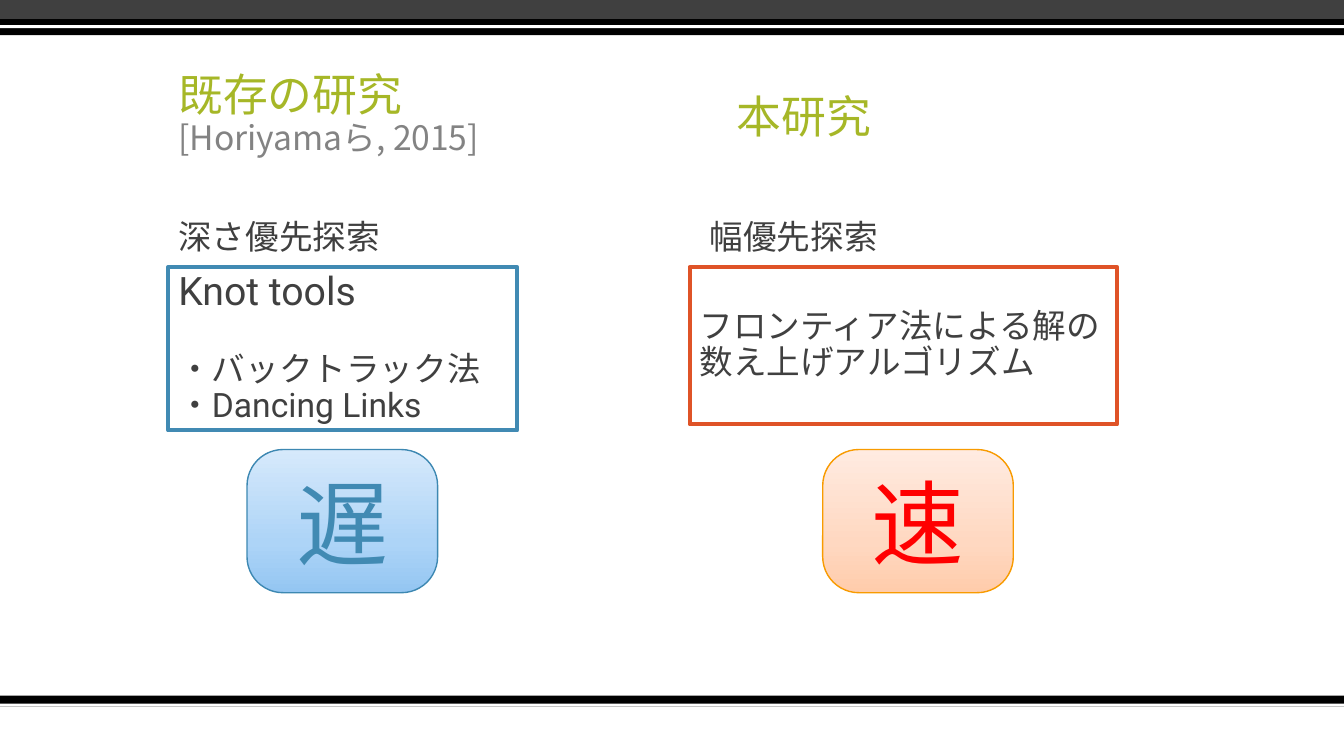
from copy import deepcopy
from dataclasses import dataclass

from pptx import Presentation
from pptx.dml.color import RGBColor
from pptx.enum.shapes import MSO_SHAPE
from pptx.enum.text import MSO_ANCHOR, PP_ALIGN
from pptx.oxml.ns import qn
from pptx.oxml.xmlchemy import OxmlElement
from pptx.util import Inches, Pt


@dataclass(frozen=True)
class Theme:
    """Colours, fonts and type sizes of the slide."""
    black: str = "000000"
    white: str = "FFFFFF"
    band: str = "404040"
    body: str = "404040"
    heading: str = "A6B727"
    citation: str = "838383"
    blue: str = "418AB3"
    blue_edge: str = "3D88B2"
    blue_blend: tuple = ("94C6F2", "ADD4F7", "D6E9FB")
    red: str = "FF0000"
    vermilion: str = "DF5327"
    orange_edge: str = "F89B00"
    orange_blend: tuple = ("FFCCAB", "FFD8C1", "FFEBE1")
    blend_stops: tuple = (0, 0.35, 1)
    heading_font: str = "Noto Sans CJK JP"
    body_font: str = "Roboto"
    heading_size: int = 32
    tool_size: int = 28
    body_size: int = 24
    verdict_size: int = 66


THEME = Theme()
SLIDE_WIDTH = 13.33


def rgb(code):
    """Turn a hex code into a colour."""
    return RGBColor.from_string(code)


def write(paragraph, text, size=THEME.body_size, color=THEME.body,
          font=THEME.body_font, align=PP_ALIGN.LEFT, spacing=0.9, before=0):
    """Add one formatted run to a paragraph."""
    paragraph.alignment = align
    paragraph.line_spacing = spacing
    paragraph.space_before = Pt(before)
    run = paragraph.add_run()
    run.text = text
    run.font.size = Pt(size)
    run.font.color.rgb = rgb(color)
    run.font.name = font
    east_asian = OxmlElement("a:ea")
    east_asian.set("typeface", font)
    run.font._element.find(qn("a:latin")).addnext(east_asian)


def add_outline(slide, box, preset=MSO_SHAPE.RECTANGLE, fill=None, line=None, width=1):
    """Add a shadowless preset shape in the given box."""
    shape = slide.shapes.add_shape(preset, *map(Inches, box))
    shape.shadow.inherit = False
    if fill:
        shape.fill.solid()
        shape.fill.fore_color.rgb = rgb(fill)
    else:
        shape.fill.background()
    if line:
        shape.line.color.rgb = rgb(line)
        shape.line.width = Pt(width)
    else:
        shape.line.fill.background()
    return shape


def add_label(slide, box, anchor=MSO_ANCHOR.TOP):
    """Add a wrapping text box and return its first paragraph."""
    frame = slide.shapes.add_textbox(*map(Inches, box)).text_frame
    frame.word_wrap = True
    frame.vertical_anchor = anchor
    return frame.paragraphs[0]


def add_bands(slide):
    """Draw the striped bands along the top and bottom edges."""
    stripes = [(6.9, 0.11, THEME.black), (6.98, 0.03, THEME.white),
               (0, 0.19, THEME.band), (0.19, 0.16, THEME.black),
               (0.25, 0.03, THEME.white)]
    for top, height, color in stripes:
        add_outline(slide, (0, top, SLIDE_WIDTH, height), fill=color)


def add_heading(slide, left, top, title, citation=""):
    """Place a column heading, with an optional citation after it."""
    paragraph = add_label(slide, (left, top, 4.21, 1.17), MSO_ANCHOR.BOTTOM)
    write(paragraph, title, size=THEME.heading_size, color=THEME.heading,
          font=THEME.heading_font)
    if citation:
        write(paragraph, citation, color=THEME.citation, font=THEME.heading_font)


def add_method(slide, box, search, search_left, lines, line, anchor):
    """Place a framed method description below the name of its search."""
    left, top, _, _ = box
    write(add_label(slide, (left + search_left, top - 0.51, 2.44, 0.46)), search)
    frame = add_outline(slide, box, line=line, width=3).text_frame
    frame.word_wrap = True
    frame.vertical_anchor = anchor
    for index, (text, style) in enumerate(lines):
        paragraph = frame.add_paragraph() if index else frame.paragraphs[0]
        write(paragraph, text, **style)


def add_verdict(slide, left, top, text, color, edge, blend):
    """Place a rounded gradient badge holding one large character."""
    badge = add_outline(slide, (left, top, 1.89, 1.42),
                        MSO_SHAPE.ROUNDED_RECTANGLE, line=edge)
    badge.adjustments[0] = 0.252
    badge.fill.gradient()
    badge.fill.gradient_angle = 90
    first_stop = badge._element.spPr.find(qn("a:gradFill")).find(qn("a:gsLst"))[0]
    first_stop.addnext(deepcopy(first_stop))
    for stop, shade, position in zip(badge.fill.gradient_stops, blend, THEME.blend_stops):
        stop.color.rgb = rgb(shade)
        stop.position = position
    badge.text_frame.vertical_anchor = MSO_ANCHOR.MIDDLE
    write(badge.text_frame.paragraphs[0], text, size=THEME.verdict_size,
          color=color, align=PP_ALIGN.CENTER, spacing=1.0)


def main():
    """Build the comparison slide and save it."""
    presentation = Presentation()
    presentation.slide_width = Inches(SLIDE_WIDTH)
    presentation.slide_height = Inches(7.5)
    slide = presentation.slides.add_slide(presentation.slide_layouts[6])
    add_bands(slide)

    add_heading(slide, 1.67, 0.44, "既存の研究　", "[Horiyamaら, 2015]")
    add_method(slide, (1.67, 2.65, 3.46, 1.62), "深さ優先探索", 0,
               [("Knot tools", {"size": THEME.tool_size}),
                ("・バックトラック法", {"before": 27}),
                ("・Dancing Links", {})],
               THEME.blue, MSO_ANCHOR.TOP)
    add_verdict(slide, 2.45, 4.46, "遅", THEME.blue, THEME.blue_edge, THEME.blue_blend)

    add_heading(slide, 7.21, 0.3, "本研究")
    add_method(slide, (6.84, 2.65, 4.24, 1.56), "幅優先探索", 0.1,
               [("フロンティア法による解の数え上げアルゴリズム", {})],
               THEME.vermilion, MSO_ANCHOR.MIDDLE)
    add_verdict(slide, 8.16, 4.46, "速", THEME.red, THEME.orange_edge, THEME.orange_blend)

    presentation.save("out.pptx")


if __name__ == "__main__":
    main()
